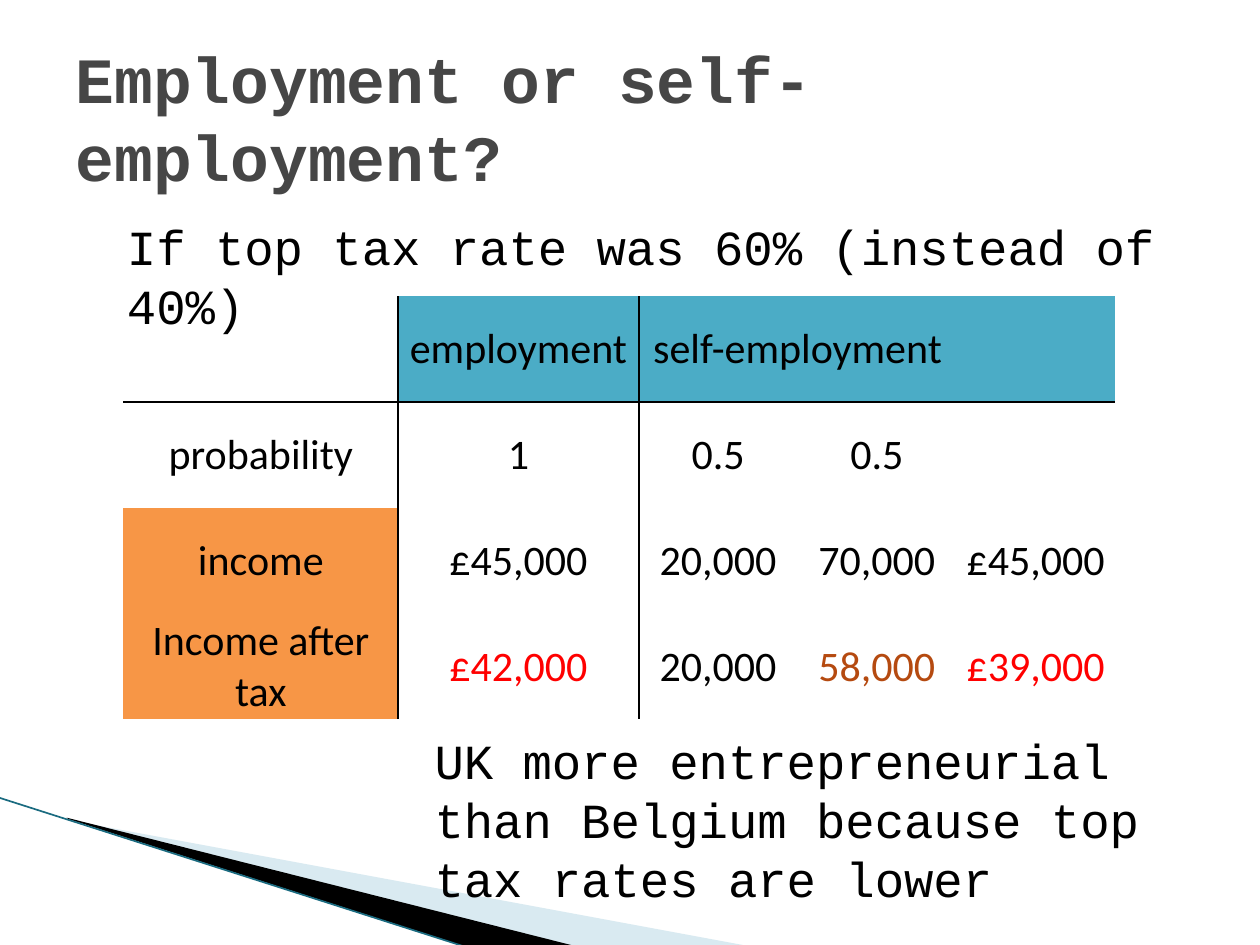
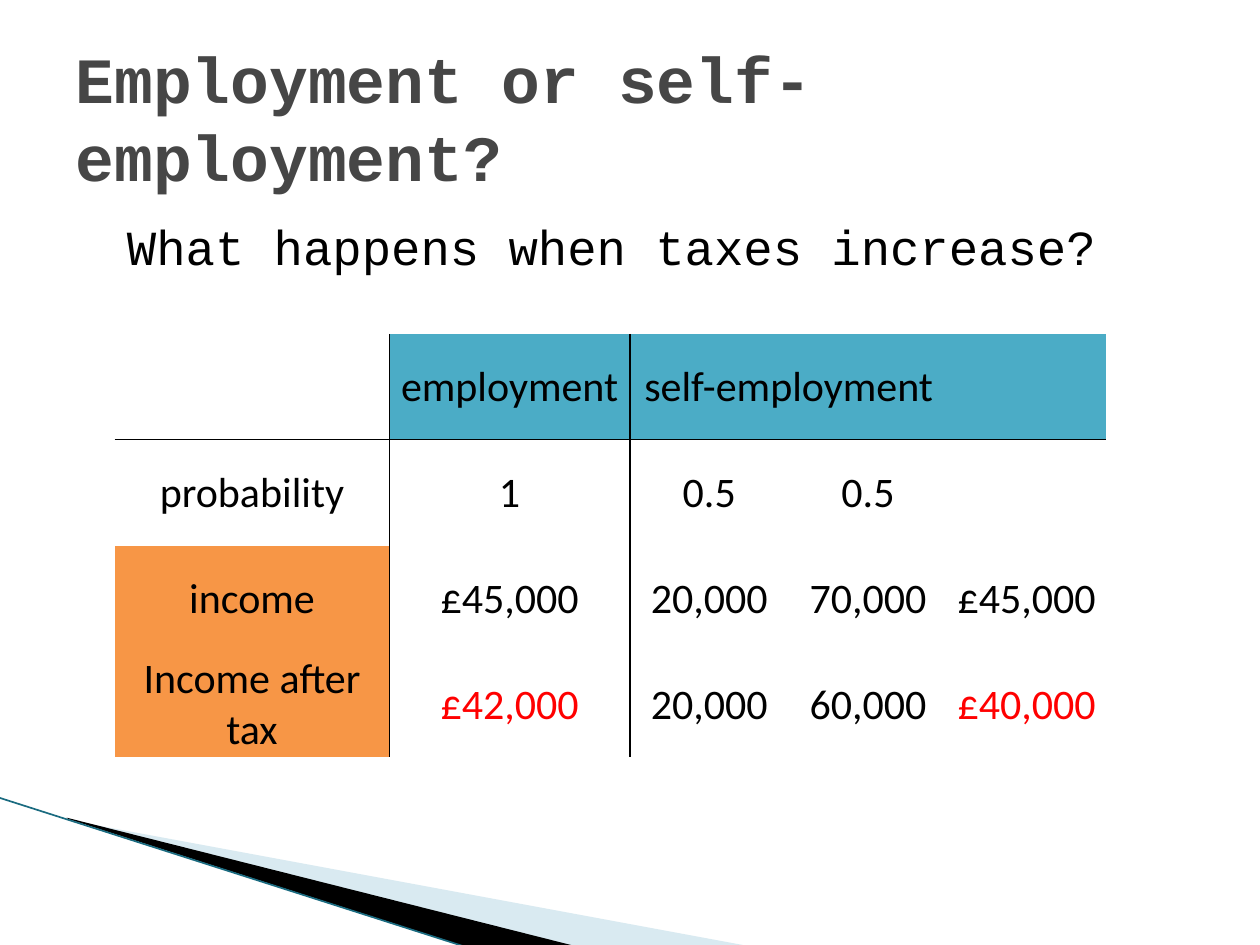
from lxml.etree import SubElement
from pptx import Presentation
from pptx.dml.color import RGBColor
from pptx.enum.shapes import MSO_CONNECTOR
from pptx.enum.text import MSO_ANCHOR, PP_ALIGN
from pptx.oxml.ns import qn
from pptx.util import Inches, Pt

BLACK = RGBColor(0x00, 0x00, 0x00)
GREY = RGBColor(0x46, 0x46, 0x46)
RED = RGBColor(0xFF, 0x00, 0x00)
BROWN = RGBColor(0xB5, 0x4A, 0x10)
BLUE = RGBColor(0x4B, 0xAC, 0xC6)
ORANGE = RGBColor(0xF7, 0x96, 0x46)
PALE = RGBColor(0xA0, 0xCB, 0xDC)
TEAL = RGBColor(0x1A, 0x6B, 0x80)

TITLE = "Employment or self-employment?"
BANDS = [
    (PALE, [(0.55, 6.51), (5.95, 7.51), (4.56, 7.51), (0.55, 6.5)]),
    (BLACK, [(0.53, 6.49), (4.57, 7.51), (3.72, 7.52), (0.54, 6.5)]),
]
COL_WIDTHS = [2.18, 1.91, 1.26, 1.26, 1.26]
ROW_HEIGHT = 0.84
COMMON_ROWS = [
    ["", "employment", "self-employment", "", ""],
    ["probability", "1", "0.5", "0.5", ""],
    ["income", "£45,000", "20,000", "70,000", "£45,000"],
]
# Per slide: table position, after-tax row, coloured columns of that row, texts
SLIDES = [
    ((0.98, 2.35),
     ["Income after tax", "£42,000", "20,000", "58,000", "£39,000"],
     {1: RED, 3: BROWN, 4: RED},
     [("UK more entrepreneurial than Belgium because top tax rates are lower",
       3.35, 5.75, 6.65, 1.51),
      ("If top tax rate was 60% (instead of 40%)", 0.91, 1.67, 8.66, 0.57)]),
    ((0.91, 2.65),
     ["Income after tax", "£42,000", "20,000", "60,000", "£40,000"],
     {1: RED, 4: RED},
     [("What happens when taxes increase?", 0.91, 1.67, 8.66, 0.57)]),
]


def set_font(p, name, size, color, bold=False):
    p.font.name = name
    p.font.size = Pt(size)
    p.font.color.rgb = color
    p.font.bold = bold


def set_borders(cell, sides):
    tcPr = cell._tc.get_or_add_tcPr()
    for side in "LRTB":
        ln = SubElement(tcPr, qn("a:ln" + side), w=str(Pt(1)))
        if side in sides:
            fill = SubElement(ln, qn("a:solidFill"))
            SubElement(fill, qn("a:srgbClr"), val=str(BLACK))
        else:
            SubElement(ln, qn("a:noFill"))


prs = Presentation()
prs.slide_width, prs.slide_height = Inches(10), Inches(7.5)

for (left, top), after_tax, accents, texts in SLIDES:
    s = prs.slides.add_slide(prs.slide_layouts[5])

    # Title
    title = s.shapes.title
    title.left, title.top = Inches(0.5), Inches(0.3)
    title.width, title.height = Inches(9), Inches(1.25)
    tf = title.text_frame
    tf.text = TITLE
    tf.vertical_anchor = MSO_ANCHOR.MIDDLE
    tf.paragraphs[0].alignment = PP_ALIGN.LEFT
    set_font(tf.paragraphs[0], "Courier New", 36.9, GREY, True)

    # Corner bands
    for color, corners in BANDS:
        points = [(Inches(x), Inches(y)) for x, y in corners]
        fb = s.shapes.build_freeform(*points[0])
        fb.add_line_segments(points[1:])
        sp = fb.convert_to_shape()
        sp.shadow.inherit = False
        sp.fill.solid()
        sp.fill.fore_color.rgb = color
        sp.line.fill.background()
        if color == PALE:
            clr = sp._element.spPr.find(".//" + qn("a:srgbClr"))
            SubElement(clr, qn("a:alpha"), val="40000")
    edge = s.shapes.add_connector(MSO_CONNECTOR.STRAIGHT, Inches(-0.01),
                                  Inches(6.33), Inches(3.71), Inches(7.52))
    edge.line.color.rgb = TEAL
    edge.line.width = Pt(0.95)
    SubElement(edge._element.spPr, qn("a:effectLst"))

    # Table
    rows = COMMON_ROWS + [after_tax]
    table = s.shapes.add_table(
        len(rows), len(COL_WIDTHS), Inches(left), Inches(top),
        Inches(sum(COL_WIDTHS)), Inches(ROW_HEIGHT * len(rows))).table
    table.first_row = table.horz_banding = False
    for column, width in zip(table.columns, COL_WIDTHS):
        column.width = Inches(width)
    for i, row in enumerate(rows):
        table.rows[i].height = Inches(ROW_HEIGHT)
        for j, text in enumerate(row):
            cell = table.cell(i, j)
            cell.margin_left = cell.margin_right = cell.margin_top = Inches(0.01)
            cell.margin_bottom = 0
            cell.vertical_anchor = MSO_ANCHOR.MIDDLE
            # Rules run beside the first two columns and under the header row
            sides = "L" if j in (1, 2) else ""
            sides += "R" if j in (0, 1) else ""
            sides += {0: "B", 1: "T"}.get(i, "")
            set_borders(cell, sides)
            if i == 0 and j > 0:
                cell.fill.solid()
                cell.fill.fore_color.rgb = BLUE
            elif i >= 2 and j == 0:
                cell.fill.solid()
                cell.fill.fore_color.rgb = ORANGE
            else:
                cell.fill.background()
            color = accents.get(j, BLACK) if i == 3 else BLACK
            p = cell.text_frame.paragraphs[0]
            p.text = text
            p.alignment = PP_ALIGN.CENTER
            set_font(p, "Calibri", 24, color)
    table.cell(0, 2).merge(table.cell(0, 3))

    # Statements around the table
    for text, x, y, w, h in texts:
        box = s.shapes.add_textbox(Inches(x), Inches(y), Inches(w), Inches(h))
        tf = box.text_frame
        tf.word_wrap = True
        tf.text = text
        set_font(tf.paragraphs[0], "Courier New", 28, BLACK)

prs.save("out.pptx")
